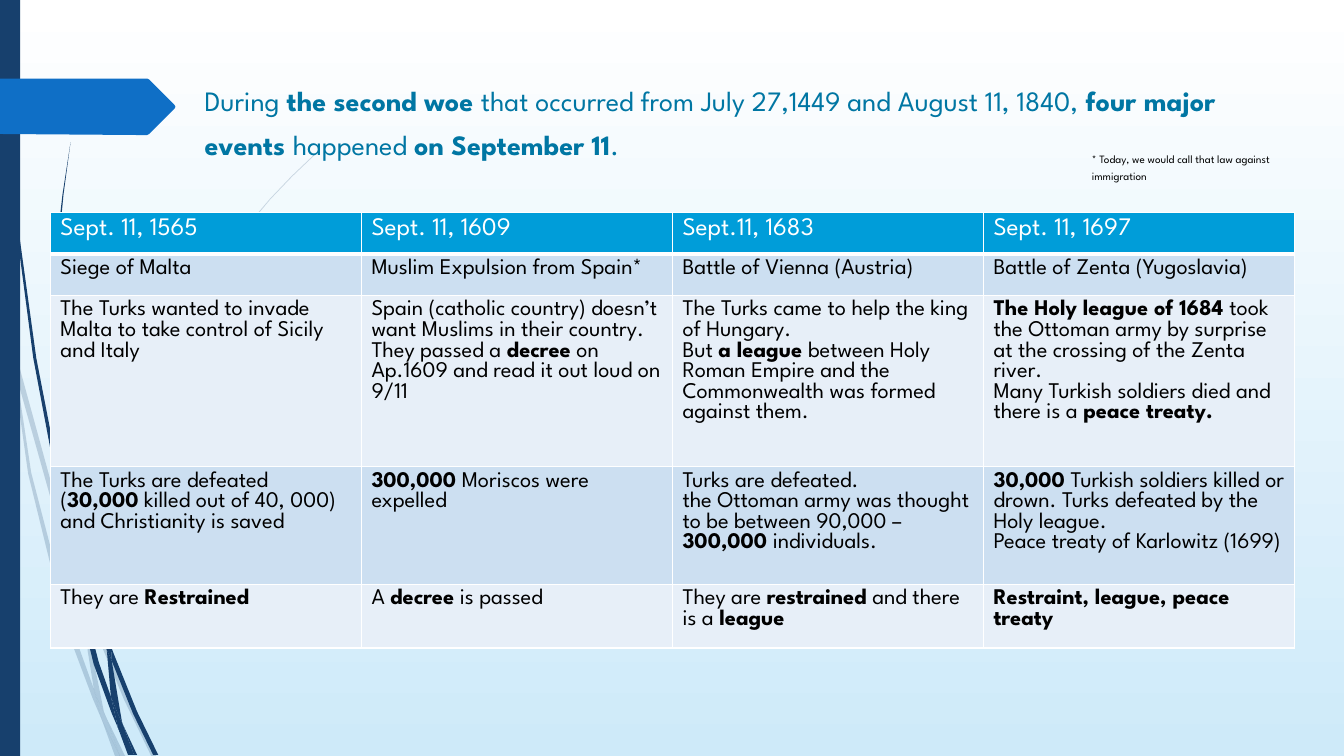
from dataclasses import dataclass

from lxml.etree import SubElement
from pptx import Presentation
from pptx.dml.color import RGBColor
from pptx.enum.shapes import MSO_SHAPE as Preset
from pptx.oxml.ns import qn
from pptx.shapes.autoshape import Shape
from pptx.slide import Slide
from pptx.table import _Cell as Cell
from pptx.text.text import TextFrame
from pptx.util import Inches, Pt

FONT = "League Spartan"
COLOURS = {
    "navy": "17406D", "arrow": "0F6FC6", "title": "0076A3", "header": "009DD9",
    "dark band": "CCDFF1", "light band": "E7EFF8", "white": "FFFFFF",
    "black": "000000", "sky": "CEEAF9",
}
Point = tuple[float, float]


@dataclass
class TextStyle:
    size: int
    colour: str
    line_spacing: float = 1.0


@dataclass
class TextBlock:
    left: float
    top: float
    width: float
    height: float
    text: str
    style: TextStyle


@dataclass
class Stalk:
    """A plant drawn as neighbouring outlines of one opacity."""
    opacity: int
    outlines: list[list[Point]]


PALE_STALK = Stalk(20, [
    [(0.11, 3.5), (0.09, 3.22), (0, 2.82), (0, 2.99), (0.1, 3.44)],
    [(0.58, 5.22), (0.84, 5.99), (0.85, 5.86), (0.62, 5.2), (0.14, 3.45), (0.17, 3.76)],
    [(0.92, 6.07), (0.88, 5.96), (0.88, 6.1), (1.23, 6.94), (1.5, 7.5), (1.55, 7.5),
     (1.27, 6.92)],
    [(1.19, 7.5), (1.24, 7.5), (1.05, 7.11)],
    [(0.93, 6.83), (0.7, 6.19), (0.31, 4.69), (0.17, 3.76), (0.11, 3.5), (0.28, 4.7),
     (0.65, 6.21), (0.92, 6.93), (1.01, 7.14), (0.99, 7.07)],
    [(0.84, 5.99), (0.87, 6.46), (0.93, 6.83), (0.96, 6.92), (1.05, 7.11), (1.03, 7.06),
     (0.91, 6.46), (0.88, 6.1), (0.88, 6.08)],
    [(0.88, 5.84), (0.95, 5.22), (1.1, 4.62), (1.32, 4.04), (1.6, 3.49), (2.29, 2.45),
     (2.68, 1.98), (2.9, 1.75), (3.12, 1.54), (3.12, 1.53), (2.89, 1.75), (2.68, 1.97),
     (2.28, 2.44), (1.58, 3.48), (1.29, 4.03), (1.07, 4.61), (0.92, 5.22), (0.85, 5.84),
     (0.85, 5.86), (0.88, 5.96)],
    [(1.01, 7.14), (1.14, 7.5), (1.19, 7.5)],
    [(0.88, 6.08), (0.88, 6.1), (0.88, 5.96), (0.85, 5.86), (0.84, 5.99)],
    [(0.96, 6.92), (0.93, 6.83), (0.99, 7.07), (1.01, 7.14), (1.19, 7.5), (1.05, 7.11)],
])
DARK_STALK = Stalk(100, [
    [(0.07, 1.1), (0.17, 2.33), (0.33, 3.55), (0.56, 4.77), (0.57, 4.81), (0.55, 4.57),
     (0.55, 4.53), (0.36, 3.55), (0.19, 2.32), (0.08, 1.09), (0.05, 0.48), (0.04, 0),
     (0.03, 0), (0.04, 0.48)],
    [(0.88, 5.92), (1.06, 6.45), (1.06, 6.31), (0.93, 5.9), (0.6, 4.72), (0.64, 5.05)],
    [(1.13, 6.49), (1.1, 6.41), (1.11, 6.56), (1.32, 7.08), (1.52, 7.49), (1.57, 7.49),
     (1.36, 7.06)],
    [(1.1, 6.91), (0.98, 6.57), (0.72, 5.56), (0.64, 5.05), (0.57, 4.77), (0.68, 5.57),
     (0.93, 6.59), (1.11, 7.08), (1.17, 7.22), (1.16, 7.17)],
    [(0.6, 4.72), (0.58, 4.53), (0.54, 3.49), (0.58, 2.45), (0.63, 1.93), (0.7, 1.41),
     (0.62, 1.93), (0.56, 2.45), (0.52, 3.49), (0.55, 4.49)],
    [(1.33, 7.49), (1.36, 7.49), (1.22, 7.19)],
    [(0.57, 4.77), (0.64, 5.05), (0.6, 4.72), (0.55, 4.49), (0.55, 4.53)],
    [(1.11, 6.33), (1.15, 5.92), (1.25, 5.52), (1.4, 5.13), (1.58, 4.76), (2.05, 4.06),
     (2.31, 3.74), (2.45, 3.59), (2.61, 3.44), (2.6, 3.44), (2.45, 3.58), (2.31, 3.73),
     (2.04, 4.05), (1.56, 4.74), (1.37, 5.12), (1.22, 5.51), (1.11, 5.9), (1.06, 6.31),
     (1.1, 6.41)],
    [(1.17, 7.22), (1.27, 7.49), (1.31, 7.49)],
    [(1.06, 6.45), (1.1, 6.91), (1.16, 7.06), (1.22, 7.19), (1.21, 7.16), (1.11, 6.56),
     (1.09, 6.51)],
    [(1.06, 6.45), (1.09, 6.51), (1.11, 6.56), (1.1, 6.41), (1.06, 6.31)],
    [(1.16, 7.06), (1.1, 6.91), (1.16, 7.17), (1.17, 7.22), (1.3, 7.49), (1.33, 7.49),
     (1.22, 7.19)],
])
TITLE_ARROW = [(0, 0.78), (1.46, 0.78), (1.48, 0.79), (1.73, 1.04), (1.74, 1.06),
               (1.73, 1.08), (1.48, 1.33), (1.46, 1.34), (1.36, 1.34), (0, 1.33)]

TITLE = TextBlock(
    1.93, 0.68, 10.65, 1.01,
    "During **the second woe **that occurred from July 27,1449 and August 11, 1840, "
    "**four major events **happened **on September 11**.",
    TextStyle(20, "title", 1.3))
FOOTNOTE = TextBlock(
    10.73, 1.42, 2.25, 0.37,
    "* Today, we would call that law against immigration", TextStyle(8, "black", 1.3))

HEADER_STYLE = TextStyle(18, "white")
BODY_STYLE = TextStyle(16, "black")
EVENTS = [
    ["Sept. 11, 1565", "Sept. 11, 1609", "Sept.11, 1683", "Sept. 11, 1697"],
    ["Siege of Malta", "Muslim Expulsion from Spain*", "Battle of Vienna (Austria)",
     "Battle of Zenta (Yugoslavia)"],
    ["The Turks wanted to invade Malta to take control of Sicily and Italy",
     "Spain (catholic country) doesn’t want Muslims in their country. They passed a "
     "**decree** on Ap.1609 and read it out loud on 9/11",
     "The Turks came to help the king of Hungary.\nBut **a league **between Holy Roman "
     "Empire and the Commonwealth was formed against them.",
     "**The Holy league of 1684 **took the Ottoman army by surprise at the crossing of "
     "the Zenta river.\nMany Turkish soldiers died and there is a **peace treaty.**"],
    ["The Turks are defeated (**30,000** killed out of 40, 000) and Christianity is saved",
     "**300,000** Moriscos were expelled",
     "Turks are defeated.\nthe Ottoman army was thought to be between 90,000 – "
     "**300,000** individuals.",
     "**30,000** Turkish soldiers killed or drown. Turks defeated by the Holy league.\n"
     "Peace treaty of Karlowitz (1699)"],
    ["They are **Restrained**", "A **decree** is passed",
     "They are **restrained** and there is a **league**",
     "**Restraint, league, peace treaty**"],
]


def rgb(name: str) -> RGBColor:
    return RGBColor.from_string(COLOURS[name])


def paint(shape: Shape, colour: str, opacity: int = 100) -> None:
    shape.shadow.inherit = False
    shape.line.fill.background()
    shape.fill.solid()
    shape.fill.fore_color.rgb = rgb(colour)
    if opacity < 100:
        colour_element = shape.fill._xPr.find(qn("a:solidFill"))[0]
        SubElement(colour_element, qn("a:alpha"), val=str(opacity * 1000))


def add_outline(slide: Slide, points: list[Point], colour: str, opacity: int = 100) -> None:
    start, *rest = [(Inches(x), Inches(y)) for x, y in points]
    builder = slide.shapes.build_freeform(*start)
    builder.add_line_segments(rest, close=True)
    paint(builder.convert_to_shape(), colour, opacity)


def write_text(frame: TextFrame, text: str, style: TextStyle) -> None:
    """Write one paragraph per line, with bold between double asterisks."""
    frame.word_wrap = True
    for index, line in enumerate(text.split("\n")):
        paragraph = frame.add_paragraph() if index else frame.paragraphs[0]
        paragraph.line_spacing = style.line_spacing
        paragraph.font.name = FONT
        paragraph.font.size = Pt(style.size)
        paragraph.font.color.rgb = rgb(style.colour)
        for position, part in enumerate(line.split("**")):
            if part:
                run = paragraph.add_run()
                run.text = part
                run.font.bold = position % 2 == 1


def add_text(slide: Slide, block: TextBlock) -> None:
    bounds = map(Inches, (block.left, block.top, block.width, block.height))
    write_text(slide.shapes.add_textbox(*bounds).text_frame, block.text, block.style)


def format_cell(cell: Cell, fill: str, bottom_width: int) -> None:
    properties = cell._tc.get_or_add_tcPr()
    for side, width in (("L", 1), ("R", 1), ("T", 1), ("B", bottom_width)):
        border = SubElement(properties, qn(f"a:ln{side}"), w=str(Pt(width)))
        SubElement(SubElement(border, qn("a:solidFill")), qn("a:srgbClr"), val=COLOURS["white"])
    cell.fill.solid()
    cell.fill.fore_color.rgb = rgb(fill)


def add_events_table(slide: Slide) -> None:
    table = slide.shapes.add_table(
        len(EVENTS), len(EVENTS[0]), Inches(0.5), Inches(2.11), Inches(12.34),
        Inches(0.41 * len(EVENTS))).table
    for row, texts in enumerate(EVENTS):
        band = "header" if row == 0 else "dark band" if row % 2 else "light band"
        for column, text in enumerate(texts):
            cell = table.cell(row, column)
            format_cell(cell, band, 1 if row else 3)
            write_text(cell.text_frame, text, BODY_STYLE if row else HEADER_STYLE)


def main() -> None:
    presentation = Presentation()
    presentation.slide_width, presentation.slide_height = Inches(13.33), Inches(7.5)
    slide = presentation.slides.add_slide(presentation.slide_layouts[6])

    background = slide.background.fill
    background.gradient()
    background.gradient_angle = 270
    for stop, colour in zip(background.gradient_stops, ("white", "sky")):
        stop.color.rgb = rgb(colour)

    for stalk in (PALE_STALK, DARK_STALK):
        for outline in stalk.outlines:
            add_outline(slide, outline, "navy", stalk.opacity)
    side_bar = slide.shapes.add_shape(Preset.RECTANGLE, 0, 0, Inches(0.2), Inches(7.5))
    paint(side_bar, "navy")
    add_outline(slide, TITLE_ARROW, "arrow")
    add_text(slide, TITLE)
    add_events_table(slide)
    add_text(slide, FOOTNOTE)
    presentation.save("out.pptx")


if __name__ == "__main__":
    main()
